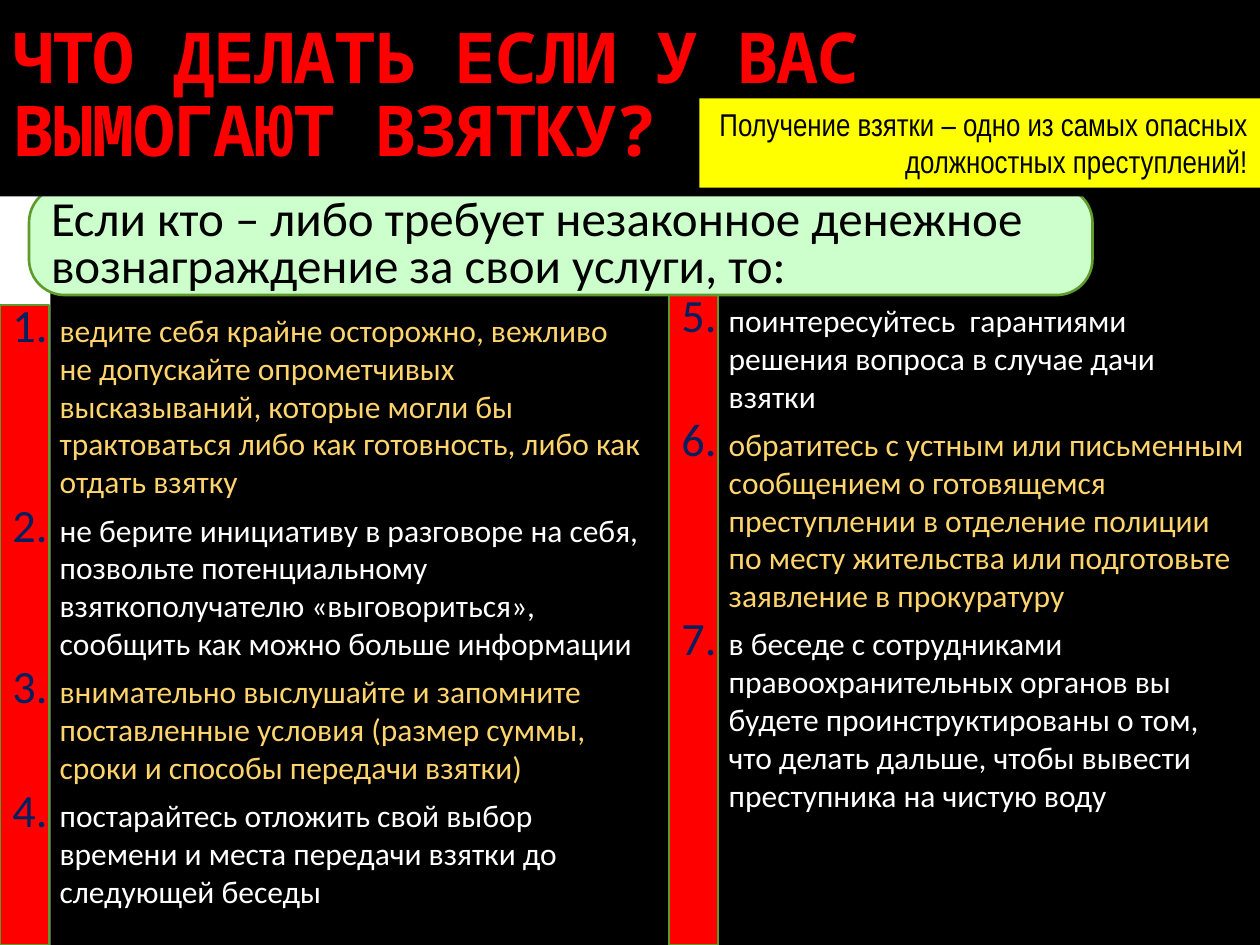
import pptx
import pptx.util
import pptx.dml.color
import pptx.enum.shapes
import pptx.enum.text
import pptx.oxml
import pptx.oxml.ns

Pt = pptx.util.Pt
Kind = pptx.enum.shapes.MSO_SHAPE
Align = pptx.enum.text.PP_ALIGN
Anchor = pptx.enum.text.MSO_ANCHOR
GOLD, WHITE, RED, BLACK, GREEN = "FED46C", "FFFFFF", "FF0000", "000000", "5E9B2C"

TITLE = "ЧТО ДЕЛАТЬ ЕСЛИ У ВАС ВЫМОГАЮТ ВЗЯТКУ?"
NOTE = "Получение взятки – одно из самых опасных должностных преступлений!"
LEAD = "Если кто – либо требует незаконное денежное вознаграждение за свои услуги, то:"
LEFT = [
    "ведите себя крайне осторожно, вежливо не допускайте опрометчивых высказываний, "
    "которые могли бы трактоваться либо как готовность, либо как отдать взятку",
    "не берите инициативу в разговоре на себя, позвольте потенциальному "
    "взяткополучателю «выговориться», сообщить как можно больше информации",
    "внимательно выслушайте и запомните поставленные условия "
    "(размер суммы, сроки и способы передачи взятки)",
    "постарайтесь отложить свой выбор времени и места передачи взятки до следующей беседы",
]
RIGHT = [
    "поинтересуйтесь  гарантиями решения вопроса в случае дачи взятки",
    "обратитесь с устным или письменным сообщением о готовящемся преступлении "
    "в отделение полиции по месту жительства или подготовьте заявление в прокуратуру",
    "в беседе с сотрудниками правоохранительных органов вы будете проинструктированы "
    "о том, что делать дальше, чтобы вывести преступника на чистую воду",
]


def color(hexa):
    return pptx.dml.color.RGBColor.from_string(hexa)


def apply(item, form):
    for name, value in form.items():
        setattr(item, name, value)


def block(slide, box, fill, line=None, kind=Kind.RECTANGLE):
    shape = slide.shapes.add_shape(kind, *map(Pt, box))
    shape.shadow.inherit = False
    shape.fill.solid()
    shape.fill.fore_color.rgb = color(fill)
    if line:
        shape.line.color.rgb = color(line)
        shape.line.width = Pt(1.5)
    else:
        shape.line.fill.background()
    return shape


def label(slide, box):
    return slide.shapes.add_textbox(*map(Pt, box))


def write(para, text, hue, font, form):
    run = para.add_run()
    run.text = text
    apply(run.font, {"name": font, **form})
    run.font.color.rgb = color(hue)
    apply(para, {"alignment": Align.LEFT})
    return run


def number(para, start):
    props = para._p.get_or_add_pPr()
    props.set("marL", str(Pt(27)))
    props.set("indent", str(-Pt(27)))
    space = pptx.oxml.ns.nsdecls("a")
    for part in (
        f'<a:buClr {space}><a:srgbClr val="002060"/></a:buClr>',
        f'<a:buSzPct {space} val="147000"/>',
        f'<a:buFont {space} typeface="+mj-lt"/>',
        f'<a:buAutoNum {space} type="arabicPeriod" startAt="{start}"/>',
    ):
        props.append(pptx.oxml.parse_xml(part))


def column(slide, box, items, start, hues, rise):
    left, top, width, height = box
    block(slide, (left, top - rise, 28, 540 - top + rise), RED, GREEN)
    frame = label(slide, box).text_frame
    frame.word_wrap = True
    for step, text in enumerate(items):
        para = frame.paragraphs[0] if step == 0 else frame.add_paragraph()
        write(para, text, hues[step % 2], "Calibri", {"size": Pt(18)})
        para.space_after = Pt(6)
        number(para, start)


def lead(slide, box):
    left, top, width, height = box
    card = block(slide, box, "CCFFCC", GREEN, Kind.ROUNDED_RECTANGLE)
    card.adjustments[0] = 0.33
    frame = label(slide, (left + 5.5, top + 3.6, width + 62, height)).text_frame
    frame.word_wrap = True
    para = frame.paragraphs[0]
    write(para, LEAD, BLACK, "Calibri", {"size": Pt(28)})
    para.line_spacing = 0.8


def header(slide, box):
    left, top, width, height = box
    frame = block(slide, box, BLACK).text_frame
    apply(frame, {"word_wrap": True, "vertical_anchor": Anchor.MIDDLE})
    para = frame.paragraphs[0]
    run = write(para, TITLE, RED, "Noto Sans Mono", {"size": Pt(40), "bold": True})
    run.font._element.set("spc", "-100")
    para.line_spacing = 0.87
    frame = block(slide, (left + 399.6, top + 56.2, 320.4, 51), "FFFF00").text_frame
    apply(frame, {"word_wrap": True, "vertical_anchor": Anchor.TOP})
    para = frame.paragraphs[0]
    write(para, NOTE, BLACK, "Arial Narrow", {"size": Pt(18)})
    para.alignment = Align.RIGHT


def main():
    deck = pptx.Presentation()
    apply(deck, {"slide_width": Pt(720), "slide_height": Pt(540)})
    slide = deck.slides.add_slide(deck.slide_layouts[6])
    slide.background.fill.solid()
    slide.background.fill.fore_color.rgb = color(BLACK)
    block(slide, (0, 0, 28.8, 540), WHITE)
    column(slide, (382.3, 168.5, 337.7, 314), RIGHT, 5, (WHITE, GOLD), 9.4)
    lead(slide, (16.6, 106.6, 607.7, 62))
    column(slide, (0, 174.2, 376.6, 353), LEFT, 1, (GOLD, WHITE), 0)
    header(slide, (0, 0, 684, 112.3))
    deck.save("out.pptx")


if __name__ == "__main__":
    main()
